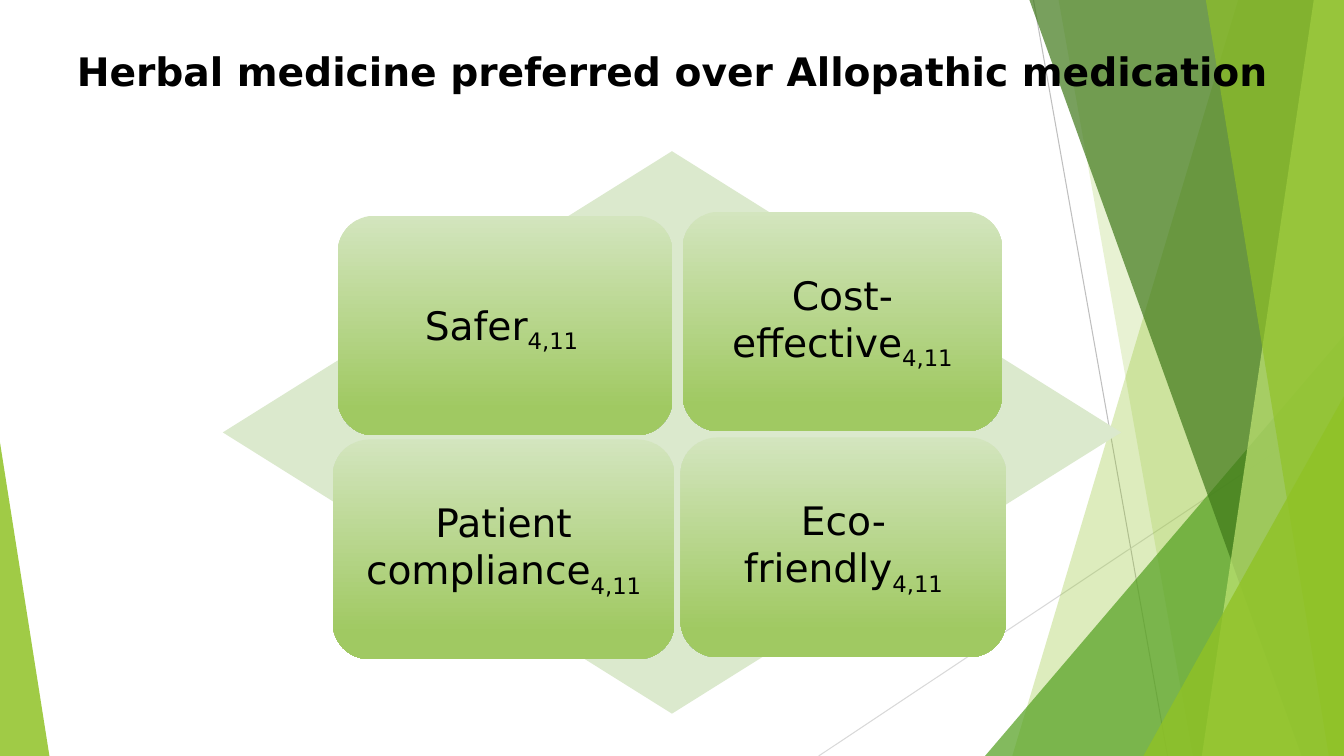
from dataclasses import dataclass

from lxml.etree import SubElement
from pptx import Presentation
from pptx.dml.color import RGBColor
from pptx.enum.shapes import MSO_CONNECTOR as Connector, MSO_SHAPE as Shape
from pptx.enum.text import MSO_ANCHOR as Anchor, PP_ALIGN as Align
from pptx.oxml.ns import qn
from pptx.util import Pt

PX = 9144  # EMU in one px, 100 px to the inch
WIDTH, HEIGHT = 1333, 750


@dataclass(frozen=True)
class Theme:
    font: str = "DejaVu Sans"
    text_size: int = 28
    hairline: float = 0.75
    text: str = "000000"
    leaf: str = "90C226"
    grass: str = "54A021"
    forest: str = "3F7819"
    lime: str = "C0E474"
    gray: str = "BFBFBF"
    light_gray: str = "D9D9D9"
    diamond: str = "DBE9CD"
    card_top: str = "D3E5BE"
    card_bottom: str = "A0C962"


class SlideBuilder:
    def __init__(self, slide, theme):
        self.shapes = slide.shapes
        self.theme = theme

    def set_format(self, target, values):
        for name, value in values.items():
            setattr(target, name, value)

    def paint(self, shape, color, opacity=100):
        shape.shadow.inherit = False
        shape.line.fill.background()
        shape.fill.solid()
        shape.fill.fore_color.rgb = RGBColor.from_string(color)
        if opacity < 100:
            color_node = shape.element.spPr.find(qn("a:solidFill"))[0]
            SubElement(color_node, qn("a:alpha"), val=str(opacity * 1000))

    def line(self, start, end, color):
        points = [value * PX for value in (*start, *end)]
        connector = self.shapes.add_connector(Connector.STRAIGHT, *points)
        connector.line.width = Pt(self.theme.hairline)
        connector.line.color.rgb = RGBColor.from_string(color)
        SubElement(connector.element.spPr, qn("a:effectLst"))

    def facet(self, points, color, opacity):
        builder = self.shapes.build_freeform(*points[0], scale=PX)
        builder.add_line_segments(points[1:], close=True)
        self.paint(builder.convert_to_shape(), color, opacity)

    def preset(self, kind, box, color, opacity=100):
        shape = self.shapes.add_shape(kind, *(value * PX for value in box))
        self.paint(shape, color, opacity)
        return shape

    def triangle(self, box, apex, color, opacity):
        shape = self.preset(Shape.ISOSCELES_TRIANGLE, box, color, opacity)
        shape.adjustments[0] = apex

    def add_text(self, paragraph, text, bold=False, subscript=False):
        run = paragraph.add_run()
        run.text = text
        self.set_format(run.font, {
            "name": self.theme.font,
            "size": Pt(self.theme.text_size),
            "bold": bold,
        })
        run.font.color.rgb = RGBColor.from_string(self.theme.text)
        if subscript:
            run._r.get_or_add_rPr().set("baseline", "-25000")

    def title(self, box, text):
        frame = self.shapes.add_textbox(*(value * PX for value in box)).text_frame
        frame.word_wrap = True
        paragraph = frame.paragraphs[0]
        paragraph.alignment = Align.CENTER
        self.add_text(paragraph, text, bold=True)

    def card(self, box, label, references):
        shape = self.preset(Shape.ROUNDED_RECTANGLE, box, self.theme.card_top)
        shape.fill.gradient()
        shape.fill.gradient_angle = 270
        colors = (self.theme.card_top, self.theme.card_bottom)
        for stop, color, position in zip(shape.fill.gradient_stops, colors, (0, 0.88)):
            stop.color.rgb = RGBColor.from_string(color)
            stop.position = position
        frame = shape.text_frame
        margins = ("margin_left", "margin_top", "margin_right", "margin_bottom")
        self.set_format(frame, {
            "word_wrap": True,
            "vertical_anchor": Anchor.MIDDLE,
            **dict.fromkeys(margins, 12 * PX),
        })
        paragraph = frame.paragraphs[0]
        self.set_format(paragraph, {"alignment": Align.CENTER, "line_spacing": 0.9})
        self.add_text(paragraph, label)
        self.add_text(paragraph, references, subscript=True)


def draw_backdrop(builder, theme):
    def band(top, bottom, color, opacity):
        """Facet from a slanted left edge to the right side of the slide."""
        corners = [(top, 0), (WIDTH, 0), (WIDTH, HEIGHT), (bottom, HEIGHT)]
        builder.facet(corners, color, opacity)

    def right_triangle(left, top, color, opacity):
        box = (left, top, WIDTH - left, HEIGHT - top)
        builder.triangle(box, 1, color, opacity)

    builder.line((1025, 0), (1158, HEIGHT), theme.gray)
    builder.line((WIDTH, 403), (812, HEIGHT), theme.light_gray)
    band(1228, 1004, theme.leaf, 30)
    band(1050, 1183, theme.leaf, 20)
    right_triangle(977, 333, theme.grass, 72)
    band(1021, 1291, theme.forest, 70)
    band(1303, 1192, theme.lime, 70)
    band(1196, 1318, theme.leaf, 65)
    right_triangle(1134, 393, theme.leaf, 80)
    builder.triangle((0, 439, 49, 311), 0, theme.leaf, 85)


def main():
    presentation = Presentation()
    presentation.slide_width = WIDTH * PX
    presentation.slide_height = HEIGHT * PX
    slide = presentation.slides.add_slide(presentation.slide_layouts[6])
    theme = Theme()
    builder = SlideBuilder(slide, theme)

    # Faceted backdrop
    draw_backdrop(builder, theme)

    # Title
    builder.title((57, 42, 1219, 145),
                  "Herbal medicine preferred over Allopathic medication")

    # Diamond with the four advantages
    builder.preset(Shape.DIAMOND, (221, 150, 891, 558), theme.diamond)
    card_height = 218
    cards = [
        (335, 214, 332, "Safer", "4,11 "),
        (677, 210, 317, "Cost-effective", "4,11"),
        (330, 436, 339, "Patient compliance", "4,11"),
        (675, 434, 323, "Eco-friendly", "4,11"),
    ]
    for left, top, width, label, references in cards:
        builder.card((left, top, width, card_height), label, references)

    presentation.save("out.pptx")


if __name__ == "__main__":
    main()
